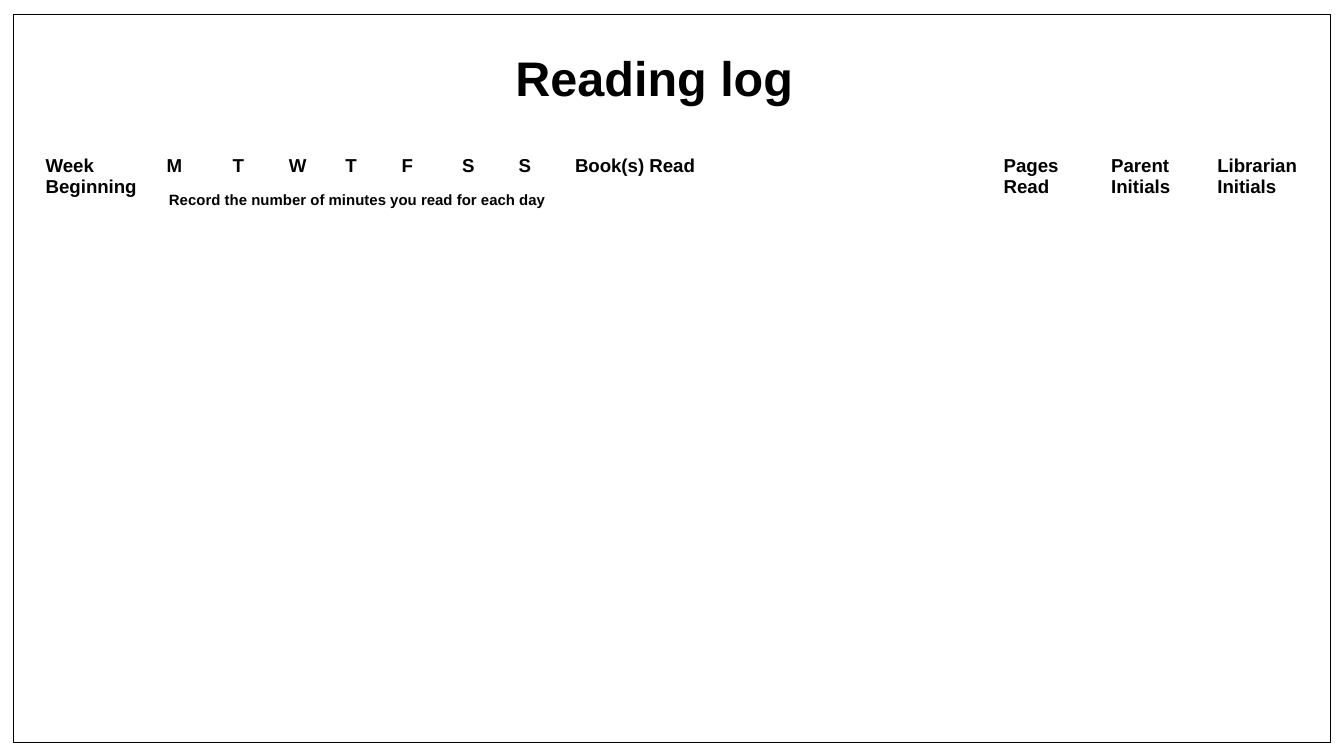
from dataclasses import dataclass

from lxml import etree
from pptx import Presentation
from pptx import util as u
from pptx.dml.color import RGBColor
from pptx.enum import shapes, text
from pptx.oxml import ns

BLACK = RGBColor(0, 0, 0)
FONT = "Arial"
WIDTH = 10
HEIGHT = WIDTH * 9 / 16
ROWS, ROW_HEIGHT = 16, 0.27
NO_STYLE_NO_GRID = "{2D5ABB26-0587-4C30-8999-92F81FD0307C}"


@dataclass
class Column:
    heading: str
    width: float
    is_day: bool = False


COLUMNS = [
    Column("Week Beginning", 0.9),
    Column("M", 0.49, True),
    Column("T", 0.42, True),
    Column("W", 0.42, True),
    Column("T", 0.42, True),
    Column("F", 0.45, True),
    Column("S", 0.42, True),
    Column("S", 0.42, True),
    Column("Book(s) Read", 3.19),
    Column("Pages Read", 0.8),
    Column("Parent Initials", 0.79),
    Column("Librarian Initials", 0.8),
]


def format_paragraph(paragraph, size: float, alignment=text.PP_ALIGN.LEFT) -> None:
    paragraph.alignment = alignment
    paragraph.font.name = FONT
    paragraph.font.size = u.Pt(size)
    paragraph.font.bold = True
    paragraph.font.color.rgb = BLACK


def add_frame(slide, margin: float) -> None:
    frame = slide.shapes.add_shape(
        shapes.MSO_SHAPE.RECTANGLE, u.Inches(margin), u.Inches(margin + 0.01),
        u.Inches(WIDTH - 2 * margin), u.Inches(HEIGHT - 2 * margin - 0.01))
    frame.shadow.inherit = False
    frame.fill.background()
    frame.line.color.rgb = BLACK
    frame.line.width = u.Pt(0.75)


def format_title(title) -> None:
    title.left, title.top = u.Inches(3.5), u.Inches(0.3)
    title.width, title.height = u.Inches(2.74), u.Inches(0.48)
    text_frame = title.text_frame
    text_frame.text = "Reading log"
    text_frame.word_wrap = True
    text_frame.auto_size = text.MSO_AUTO_SIZE.NONE
    text_frame.vertical_anchor = text.MSO_ANCHOR.MIDDLE
    text_frame.margin_left = text_frame.margin_right = u.Inches(0.1)
    text_frame.margin_top = text_frame.margin_bottom = u.Inches(0.1)
    paragraph = text_frame.paragraphs[0]
    format_paragraph(paragraph, 26, text.PP_ALIGN.CENTER)
    paragraph.line_spacing = 1.15


def fill_cell(cell, content: str, size: float, alignment=text.PP_ALIGN.LEFT) -> None:
    cell.text = content
    format_paragraph(cell.text_frame.paragraphs[0], size, alignment)


def shrink_empty_cell(cell, size: int) -> None:
    paragraph = cell.text_frame.paragraphs[0]
    etree.SubElement(paragraph._p, ns.qn("a:endParaRPr"), sz=str(size * 100))


def add_log(slide) -> None:
    total_width = sum(column.width for column in COLUMNS)
    table = slide.shapes.add_table(
        ROWS, len(COLUMNS), u.Inches(0.24), u.Inches(1.11),
        u.Inches(total_width), u.Inches(ROWS * ROW_HEIGHT)).table
    table.first_row = table.horz_banding = False
    table._tbl.tblPr.find(ns.qn("a:tableStyleId")).text = NO_STYLE_NO_GRID
    for row in table.rows:
        row.height = u.Inches(ROW_HEIGHT)

    for index, column in enumerate(COLUMNS):
        table.columns[index].width = u.Inches(column.width)
        heading = table.cell(0, index)
        if not column.is_day:
            heading.merge(table.cell(1, index))
        fill_cell(heading, column.heading, 10)

    days = [index for index, column in enumerate(COLUMNS) if column.is_day]
    instruction = table.cell(1, days[0])
    instruction.merge(table.cell(1, days[-1]))
    fill_cell(instruction, "Record the number of minutes you read for each day",
              8, text.PP_ALIGN.CENTER)

    for cell in table.iter_cells():
        cell.fill.background()
        if not cell.text:
            shrink_empty_cell(cell, 10)


def main() -> None:
    presentation = Presentation()
    presentation.slide_width = u.Inches(WIDTH)
    presentation.slide_height = u.Inches(HEIGHT)
    slide = presentation.slides.add_slide(presentation.slide_layouts[5])
    add_frame(slide, 0.1)
    format_title(slide.shapes.title)
    add_log(slide)
    presentation.save("out.pptx")


if __name__ == "__main__":
    main()
